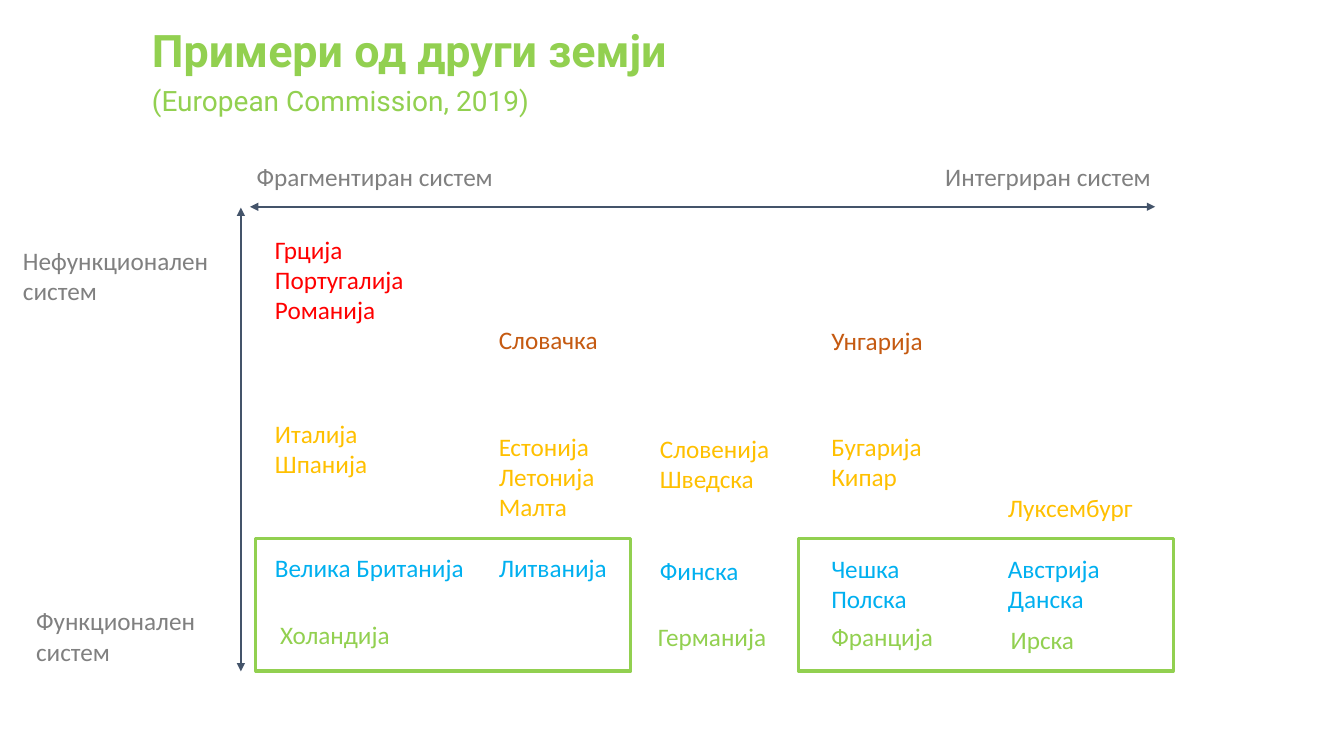
from lxml.etree import SubElement
from pptx import Presentation
from pptx.dml.color import RGBColor
from pptx.enum.shapes import MSO_CONNECTOR, MSO_SHAPE
from pptx.enum.text import MSO_ANCHOR, MSO_AUTO_SIZE
from pptx.oxml.ns import qn
from pptx.util import Cm, Pt

GREEN = RGBColor(0x92, 0xD0, 0x50)
NAVY = RGBColor(0x44, 0x54, 0x6A)
GREY = RGBColor(0x80, 0x80, 0x80)
RED = RGBColor(0xFF, 0x00, 0x00)
RUST = RGBColor(0xC5, 0x5A, 0x11)
GOLD = RGBColor(0xFF, 0xC0, 0x00)
BLUE = RGBColor(0x00, 0xB0, 0xF0)
LINE = 22  # height of one 18 pt line, in points

deck = Presentation()
deck.slide_width, deck.slide_height = Cm(33.87), Cm(19.05)
slide = deck.slides.add_slide(deck.slide_layouts[6])
shapes = slide.shapes


def add_box(left, top, width, height):
    box = shapes.add_textbox(Cm(left), Cm(top), Cm(width), Cm(height))
    box.text_frame.word_wrap = True
    return box.text_frame


def add_run(para, text, size, font, color, bold=False):
    run = para.add_run()
    run.text = text
    run.font.size = Pt(size)
    run.font.name = font
    run.font.bold = bold
    run.font.color.rgb = color


# Title
frame = add_box(3.58, 0, 25.63, 3.68)
frame.vertical_anchor = MSO_ANCHOR.MIDDLE
head = frame.paragraphs[0]
add_run(head, "Примери од други земји", 32, "Roboto", GREEN, True)
sub = frame.add_paragraph()
sub.space_before = Pt(7)
add_run(sub, "(European Commission, 2019)", 20, "Roboto", GREEN)
for para in (head, sub):
    para.line_spacing = 0.9

# Axes
for ends in ((6.07, 5.23, 6.07, 16.92), (6.3, 5.21, 29.11, 5.21)):
    axis = shapes.add_connector(MSO_CONNECTOR.STRAIGHT, *map(Cm, ends))
    axis.line.color.rgb = NAVY
    axis.line.width = Pt(1.5)
    for tag in ("a:headEnd", "a:tailEnd"):
        SubElement(axis.line._get_or_add_ln(), qn(tag), type="triangle")
    SubElement(axis._element.spPr, qn("a:effectLst"))

# Labels and countries: left, top, width, then groups of
# (colour, blank lines above, names)
COLS = (6.68, 12.32, 16.38, 20.7, 25.15)
TEXTS = (
    (6.22, 3.94, 6.48, [(GREY, 0, ["Фрагментиран систем"])]),
    (23.57, 3.94, 6.48, [(GREY, 0, ["Интегриран систем"])]),
    (0.33, 6.05, 6.48, [(GREY, 0, ["Нефункционален", "систем"])]),
    (0.66, 15.14, 6.48, [(GREY, 0, ["Функционален", "систем"])]),
    (COLS[0], 5.77, 4.39, [(RED, 0, ["Грција", "Португалија", "Романија"])]),
    (COLS[0], 10.41, 4.39, [(GOLD, 0, ["Италија", "Шпанија"])]),
    (COLS[0], 13.79, 5.74, [(BLUE, 0, ["Велика Британија"])]),
    (6.81, 15.49, 5.74, [(GREEN, 0, ["Холандија"])]),
    (16.33, 15.52, 5.74, [(GREEN, 0, ["Германија"])]),
    (COLS[3], 15.54, 5.74, [(GREEN, 0, ["Франција"])]),
    (25.22, 15.6, 5.74, [(GREEN, 0, ["Ирска"])]),
    (COLS[1], 8.05, 4.39, [(RUST, 0, ["Словачка"])]),
    (COLS[1], 10.74, 4.39, [(GOLD, 0, ["Естонија", "Летонија", "Малта"]),
                            (BLUE, 1, ["Литванија"])]),
    (COLS[2], 10.8, 4.39, [(GOLD, 0, ["Словенија", "Шведска"]),
                           (BLUE, 2, ["Финска"])]),
    (COLS[3], 8.08, 4.39, [(RUST, 0, ["Унгарија"])]),
    (COLS[3], 10.74, 4.39, [(GOLD, 0, ["Бугарија", "Кипар"]),
                            (BLUE, 2, ["Чешка", "Полска"])]),
    (COLS[4], 12.27, 4.39, [(GOLD, 0, ["Луксембург"]),
                            (BLUE, 1, ["Австрија", "Данска"])]),
)
for left, top, width, groups in TEXTS:
    lines = sum(gap + len(names) for _, gap, names in groups)
    frame = add_box(left, top, width, 0.25 + 0.77 * lines)
    frame.auto_size = MSO_AUTO_SIZE.SHAPE_TO_FIT_TEXT
    para = frame.paragraphs[0]
    for color, gap, names in groups:
        for row, name in enumerate(names):
            if para.runs:
                para = frame.add_paragraph()
            if gap and row == 0:
                para.space_before = Pt(gap * LINE)
            add_run(para, name, 18, "Calibri", color)

# Frames round the functional systems
for left in (20.12, 6.45):
    rect = shapes.add_shape(MSO_SHAPE.RECTANGLE, Cm(left), Cm(13.56), Cm(9.45), Cm(3.35))
    rect.shadow.inherit = False
    rect.fill.background()
    rect.line.color.rgb = GREEN
    rect.line.width = Pt(2.25)

deck.save("out.pptx")
